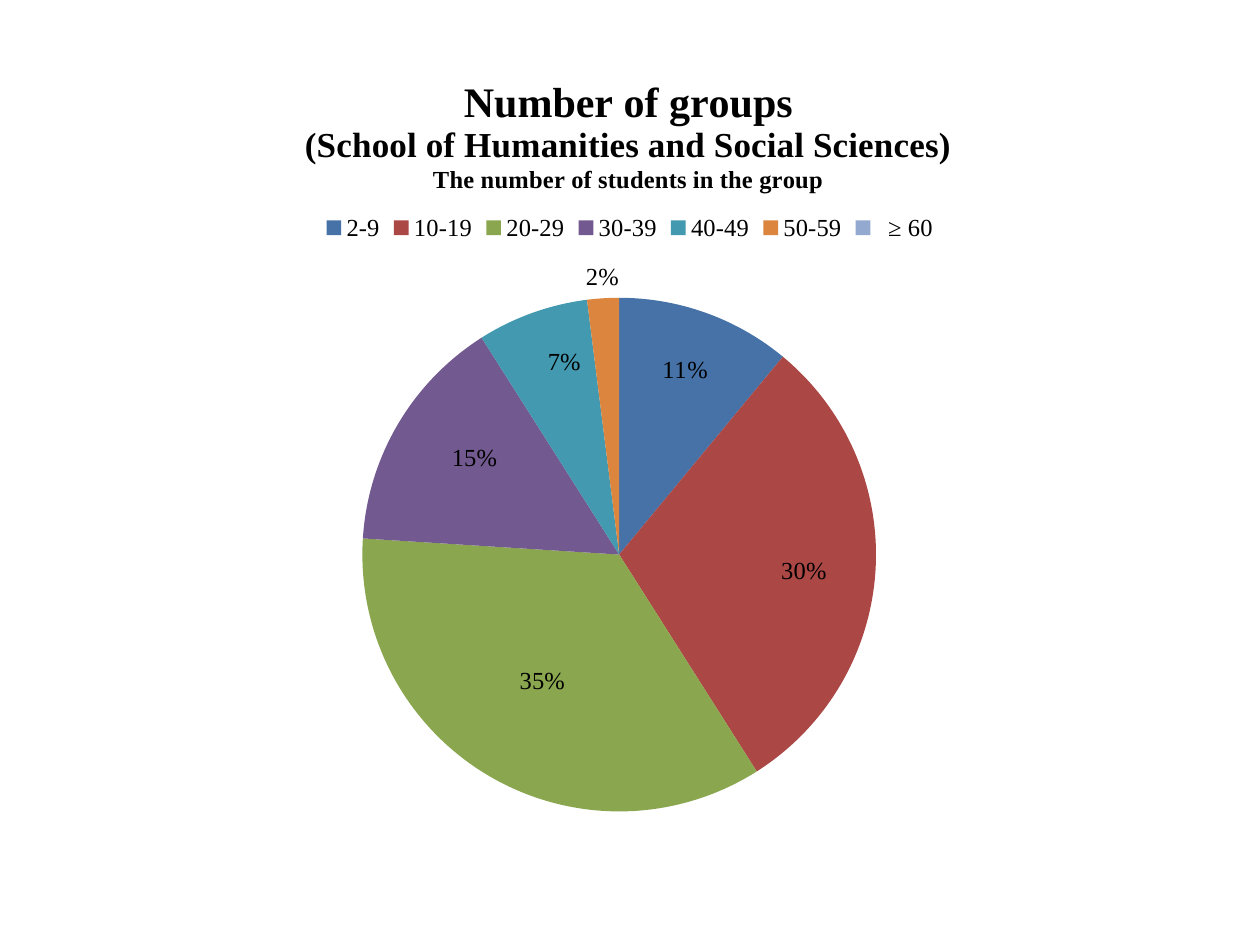
from pptx import Presentation
from pptx.chart.data import CategoryChartData
from pptx.dml.color import RGBColor
from pptx.enum.chart import XL_CHART_TYPE, XL_LABEL_POSITION, XL_LEGEND_POSITION
from pptx.oxml import parse_xml
from pptx.oxml.ns import nsdecls, qn
from pptx.util import Pt

SERIF = "Times New Roman"
BLACK = RGBColor(0, 0, 0)
BLUE = RGBColor(0x46, 0x72, 0xA8)
RED = RGBColor(0xAB, 0x47, 0x44)
GREEN = RGBColor(0x8A, 0xA6, 0x4F)
PURPLE = RGBColor(0x72, 0x5A, 0x90)
TEAL = RGBColor(0x42, 0x99, 0xB0)
ORANGE = RGBColor(0xDC, 0x85, 0x3E)
PALE = RGBColor(0x93, 0xA9, 0xCF)

# group size, percent, colour, label shift from the slice middle
SLICES = [
    ("2-9", 11, BLUE, (0.02, -0.08)),
    ("10-19", 30, RED, (0.05, 0.01)),
    ("20-29", 35, GREEN, (-0.01, 0.02)),
    ("30-39", 15, PURPLE, (-0.03, -0.04)),
    ("40-49", 7, TEAL, (-0.01, -0.09)),
    ("50-59", 2, ORANGE, None),
    ("  ≥ 60", None, PALE, None),
]
TITLE = [
    ("Number of groups", 24),
    ("(School of Humanities and Social Sciences)", 20),
    ("The number of students in the group", 14),
]


def style(font, size, bold=False):
    font.name, font.size, font.bold = SERIF, Pt(size), bold
    font.color.rgb = BLACK


def layout(x, y, w=None, h=None, inner=False, shift=False):
    """Manual layout in fractions of the chart; shift moves from the default."""
    parts = ['<c:layoutTarget val="inner"/>'] if inner else []
    if not shift:
        parts += ['<c:xMode val="edge"/>', '<c:yMode val="edge"/>']
    sizes = {"x": x, "y": y, "w": w, "h": h}
    parts += [f'<c:{k} val="{v}"/>' for k, v in sizes.items() if v is not None]
    return parse_xml(f'<c:layout {nsdecls("c")}><c:manualLayout>'
                     f'{"".join(parts)}</c:manualLayout></c:layout>')


def place(parent, box, after=None):
    """Put a layout in parent, first or after the named child."""
    for old in parent.findall(qn("c:layout")):
        parent.remove(old)
    if after is None:
        parent.insert(0, box)
    else:
        parent.find(qn(after)).addnext(box)


def add_title(chart):
    frame = chart.chart_title.text_frame
    for i, (text, size) in enumerate(TITLE):
        para = frame.paragraphs[0] if i == 0 else frame.add_paragraph()
        run = para.add_run()
        run.text = text
        style(para.font, size, True)
        style(run.font, size, True)
    chart.chart_title.include_in_layout = False
    place(chart.chart_title._element, layout(0.21, 0.03), "c:tx")


def add_legend(chart):
    chart.has_legend = True
    legend = chart.legend
    legend.position = XL_LEGEND_POSITION.TOP
    legend.include_in_layout = False
    style(legend.font, 14)
    place(legend._element, layout(0.22, 0.2, 0.56, 0.05), "c:legendPos")


def show_percent(node):
    for tag, val in (("c:showVal", "0"), ("c:showPercent", "1")):
        node.find(qn(tag)).set("val", val)


def add_labels(plot):
    plot.has_data_labels = True
    series = plot.series[0]
    labels = series.data_labels
    labels.show_percentage, labels.show_value = True, False
    labels.position = XL_LABEL_POSITION.OUTSIDE_END
    labels.number_format, labels.number_format_is_linked = "0%", False
    style(labels.font, 14)
    leader = labels._element.find(qn("c:showLeaderLines"))
    if leader is not None:
        leader.set("val", "0")
    for i, (_, _, color, move) in enumerate(SLICES):
        point = series.points[i]
        point.format.fill.solid()
        point.format.fill.fore_color.rgb = color
        if move:
            label = point.data_label
            style(label.font, 14)
            label.position = XL_LABEL_POSITION.CENTER
            node = labels._element.findall(qn("c:dLbl"))[-1]
            show_percent(node)
            place(node, layout(*move, shift=True), "c:idx")


def add_pie(slide, left, top, width, height):
    data = CategoryChartData()
    data.categories = [row[0] for row in SLICES]
    data.add_series("Series 1", [row[1] for row in SLICES])
    chart = slide.shapes.add_chart(
        XL_CHART_TYPE.PIE, left, top, width, height, data).chart
    chart.font.name, chart.font.size = "Calibri", Pt(10)
    chart.font.color.rgb = BLACK
    add_title(chart)
    add_legend(chart)
    plot = chart.plots[0]
    plot.vary_by_categories = True
    add_labels(plot)
    area = plot._element.getparent()
    place(area, layout(0.264, 0.313, 0.453, 0.647, inner=True))


def main():
    deck = Presentation()
    deck.slide_width, deck.slide_height = Pt(720), Pt(540)
    slide = deck.slides.add_slide(deck.slide_layouts[6])
    add_pie(slide, Pt(36), Pt(28), Pt(648), Pt(454))
    deck.save("out.pptx")


if __name__ == "__main__":
    main()
